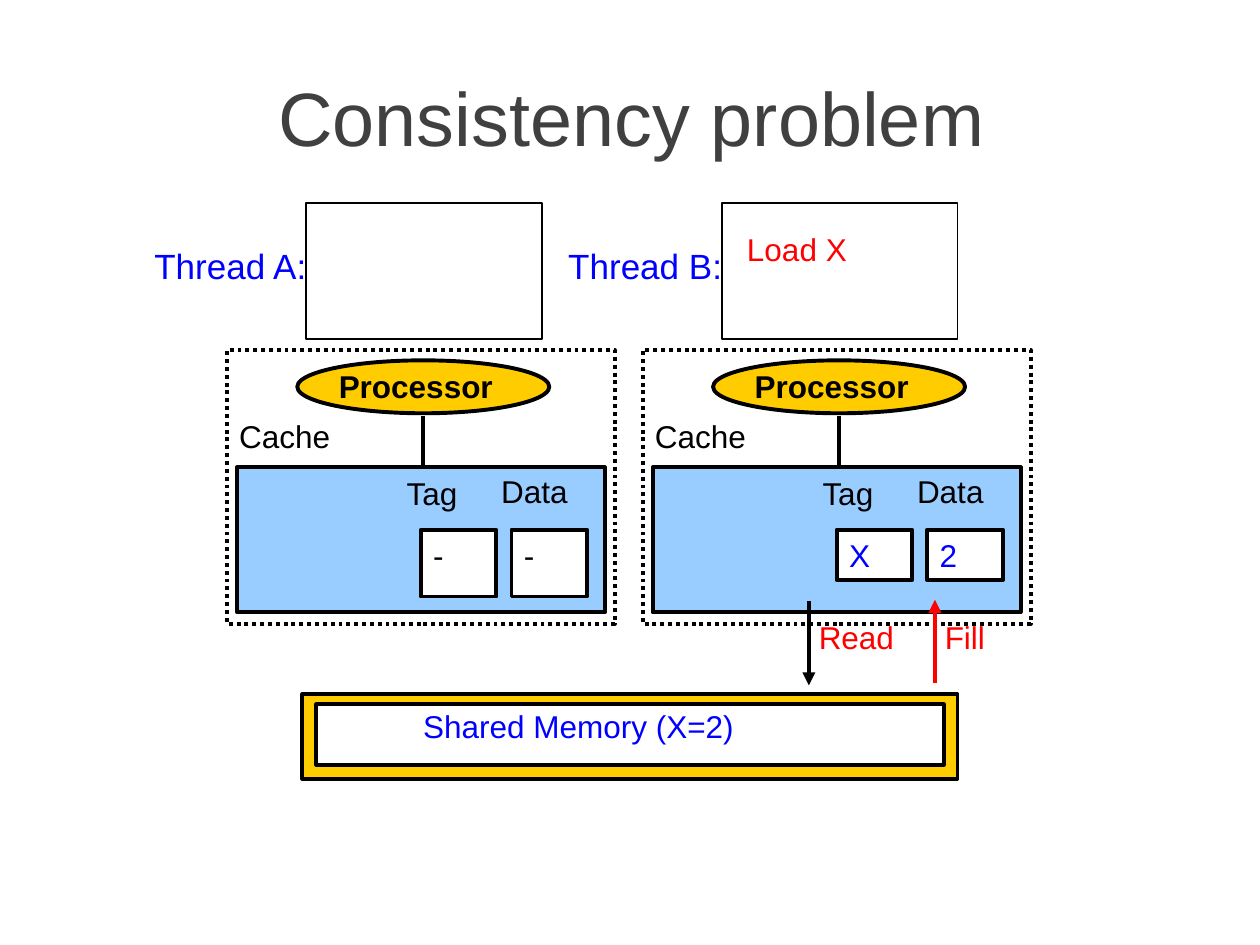
from dataclasses import dataclass

from lxml import etree
from pptx import Presentation
from pptx import util as u
from pptx.dml.color import RGBColor
from pptx.enum import dml, shapes, text
from pptx.oxml import ns

RECT, OVAL = shapes.MSO_SHAPE.RECTANGLE, shapes.MSO_SHAPE.OVAL
TOP, MIDDLE = text.MSO_ANCHOR.TOP, text.MSO_ANCHOR.MIDDLE
LEFT, CENTER, RIGHT = text.PP_ALIGN.LEFT, text.PP_ALIGN.CENTER, text.PP_ALIGN.RIGHT


@dataclass(frozen=True)
class Theme:
    """Colours, type sizes and line widths of the slide."""
    font: str = "Arial"
    ink: str = "000000"
    grey: str = "404040"
    blue: str = "0000FF"
    red: str = "FF0000"
    gold: str = "FFCC00"
    sky: str = "99CCFF"
    white: str = "FFFFFF"
    title: float = 43.2
    thread: float = 20
    body: float = 18
    thin: float = 1
    thick: float = 2.25
    arrow: float = 2.5


T = Theme()
WIDTH, HEIGHT = u.Inches(10), u.Inches(7.5)
COLS, ROWS = 100, 75
NODE_STEP = 33


def grid(x, y):
    """Turn columns and rows into slide lengths."""
    return round(x * WIDTH / COLS), round(y * HEIGHT / ROWS)


def write(sp, words, color=T.ink, size=T.body, bold=False, align=LEFT, anchor=TOP):
    """Put one line of text into a shape or text box."""
    tf = sp.text_frame
    left = 0 if align == RIGHT else u.Inches(0.1)
    right = 0 if align == LEFT else u.Inches(0.1)
    frame = {"word_wrap": True, "vertical_anchor": anchor,
             "margin_left": left, "margin_right": right}
    for name, value in frame.items():
        setattr(tf, name, value)
    p = tf.paragraphs[0]
    p.alignment = align
    r = p.add_run()
    r.text = words
    for name, value in {"name": T.font, "size": u.Pt(size), "bold": bold}.items():
        setattr(r.font, name, value)
    r.font.color.rgb = RGBColor.from_string(color)


def label(s, x, y, w, h, words, **style):
    """Add a text box."""
    write(s.shapes.add_textbox(*grid(x, y), *grid(w, h)), words, **style)


def box(s, x, y, w, h, fill=None, weight=T.thick, dash=None, kind=RECT):
    """Add an outlined shape, filled or open."""
    sp = s.shapes.add_shape(kind, *grid(x, y), *grid(w, h))
    sp.shadow.inherit = False
    if fill:
        sp.fill.solid()
        sp.fill.fore_color.rgb = RGBColor.from_string(fill)
    else:
        sp.fill.background()
    sp.line.color.rgb = RGBColor.from_string(T.ink)
    for name, value in {"width": u.Pt(weight), "dash_style": dash}.items():
        setattr(sp.line, name, value)
    return sp


def link(s, x, y1, y2, color=T.ink, weight=T.thick, arrow=False):
    """Add a vertical line, with an arrowhead at its end if asked."""
    ln = s.shapes.add_connector(shapes.MSO_CONNECTOR.STRAIGHT, *grid(x, y1), *grid(x, y2))
    ln.line.color.rgb = RGBColor.from_string(color)
    ln.line.width = u.Pt(weight)
    if arrow:
        etree.SubElement(ln.line._get_or_add_ln(), ns.qn("a:tailEnd"), type="triangle")
    etree.SubElement(ln._element.spPr, ns.qn("a:effectLst"))


def memory(s):
    """Draw the shared memory bar."""
    box(s, 24, 55.1, 52, 6.7, T.gold)
    box(s, 25.1, 55.9, 49.8, 4.8, T.white)
    label(s, 32.6, 55.6, 34.9, 5, "Shared Memory (X=2)", color=T.blue)


def node(s, x, thread, tag, data, cell_height, color):
    """Draw a thread with its processor and cache, x being the left column."""
    box(s, x + 5.6, 28.6, 20, 4.2, T.gold, kind=OVAL)
    label(s, x, 32.6, 11.7, 5, "Cache")
    label(s, x + 7.9, 28.6, 14.2, 4, "Processor", bold=True, anchor=MIDDLE)
    box(s, x + 6.3, 16.1, 18.7, 10.8, weight=T.thin)
    box(s, x, 27.8, 30.8, 21.7, dash=dml.MSO_LINE.ROUND_DOT)
    box(s, x + 0.8, 37.1, 29.2, 11.5, T.sky)
    fields = (("Tag", tag, 13.3, 37.1, 15.4), ("Data", data, 20.8, 37, 22.6))
    for heading, value, head_x, head_y, cell_x in fields:
        write(box(s, x + cell_x, 42.05, 6, cell_height, T.white), value, color=color)
        label(s, x + head_x, head_y, 9.7, 5, heading)
    link(s, x + 15.6, 33, 37.1)
    label(s, x - 6.9, 18.9, 14.2, 4.3, thread, color=T.blue, size=T.thread, align=RIGHT)


def traffic(s):
    """Draw the read and fill moves and the load instruction."""
    link(s, 64.2, 47.7, 54.4, weight=T.arrow, arrow=True)
    label(s, 64, 48.6, 10, 5, "Read", color=T.red)
    link(s, 74.2, 54.2, 47.6, T.red, T.arrow, arrow=True)
    label(s, 74, 48.6, 6.3, 5, "Fill", color=T.red)
    label(s, 58.3, 17.8, 10.2, 4, "Load X", color=T.red)


def main():
    """Build and save the slide."""
    prs = Presentation()
    prs.slide_width, prs.slide_height = WIDTH, HEIGHT
    s = prs.slides.add_slide(prs.slide_layouts[6])
    label(s, 3, 6.7, 94.2, 5, "Consistency problem", color=T.grey, size=T.title,
          align=CENTER, anchor=MIDDLE)
    memory(s)
    nodes = (("Thread A:", "-", "-", 5.3, T.ink), ("Thread B:", "X", "2", 4, T.blue))
    for i, content in enumerate(nodes):
        node(s, 18 + i * NODE_STEP, *content)
    traffic(s)
    prs.save("out.pptx")


if __name__ == "__main__":
    main()
